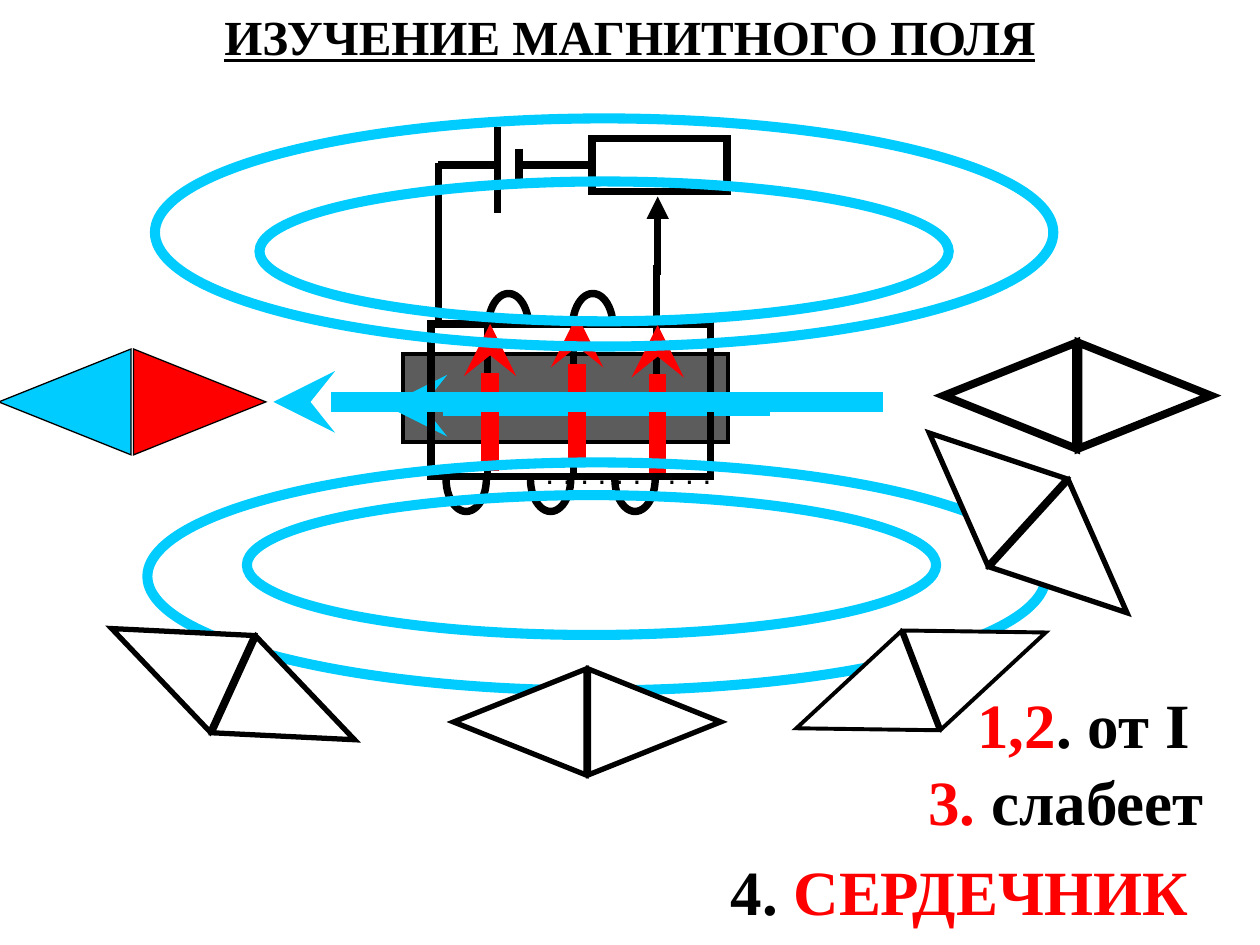
from math import cos, pi, radians, sin

from lxml.etree import SubElement
from pptx import Presentation
from pptx.dml.color import RGBColor
from pptx.enum.shapes import MSO_CONNECTOR as Link, MSO_SHAPE as Preset
from pptx.enum.text import MSO_ANCHOR as Anchor, PP_ALIGN as Align
from pptx.oxml.ns import qn
from pptx.util import Inches, Pt

BLACK, WHITE, RED, CYAN = "000000", "FFFFFF", "FF0000", "00CCFF"
SERIF = "Times New Roman"
WIRE = 4.25          # line width of the circuit, points
FIELD = 5.75         # line width of the field loops
COIL_PITCH = 0.67    # distance between neighbouring turns
COIL_TOP, COIL_BOTTOM = 2.59, 3.8


def color(hex_code):
    return RGBColor.from_string(hex_code)


def style(shape, fill, line, width):
    shape.shadow.inherit = False
    if fill:
        shape.fill.solid()
        shape.fill.fore_color.rgb = color(fill)
    else:
        shape.fill.background()
    shape.line.color.rgb = color(line)
    shape.line.width = Pt(width)
    SubElement(shape.line._get_or_add_ln(), qn("a:miter"), lim="800000")
    return shape


def add_preset(slide, kind, left, top, width, height, fill=None, line=BLACK, weight=WIRE):
    box = [Inches(v) for v in (left, top, width, height)]
    return style(slide.shapes.add_shape(kind, *box), fill, line, weight)


def add_line(slide, start, end, hex_code=BLACK, weight=WIRE, head=None):
    ends = [Inches(v) for v in (*start, *end)]
    line = slide.shapes.add_connector(Link.STRAIGHT, *ends)
    line.line.color.rgb = color(hex_code)
    line.line.width = Pt(weight)
    if head:
        SubElement(line.line._get_or_add_ln(), qn("a:tailEnd"), type=head)
    SubElement(line._element.spPr, qn("a:effectLst"))
    return line


def add_half_turn(slide, center_x, base_y, direction):
    """Half ellipse below (direction 1) or above (-1) the coil's edge."""
    points = [(Inches(center_x - 0.16 * cos(pi * i / 24)),
               Inches(base_y + direction * 0.26 * sin(pi * i / 24))) for i in range(25)]
    builder = slide.shapes.build_freeform(*points[0])
    builder.add_line_segments(points[1:], close=False)
    style(builder.convert_to_shape(), None, BLACK, WIRE)


def add_needle(slide, center_x, center_y, angle, weight, fills=(WHITE, WHITE), base=0.84):
    """Compass needle: two triangles that share a base and point apart."""
    length, offset = 1.05, 0.535
    for turn, fill in zip((angle, angle + 180), fills):
        x = center_x + offset * sin(radians(turn))
        y = center_y - offset * cos(radians(turn))
        half = add_preset(slide, Preset.ISOSCELES_TRIANGLE, x - base / 2, y - length / 2,
                          base, length, fill, BLACK, weight)
        half.rotation = turn % 360


def format_runs(paragraph, pieces, size, font=SERIF, bold=True):
    for words, hex_code in pieces:
        run = paragraph.add_run()
        run.text = words
        run.font.size = Pt(size)
        run.font.name = font
        run.font.bold = bold
        run.font.color.rgb = color(hex_code)


def add_label(slide, left, top, width, height, pieces, size=36, wrap=True, **font):
    label = slide.shapes.add_textbox(*[Inches(v) for v in (left, top, width, height)])
    label.text_frame.word_wrap = wrap
    format_runs(label.text_frame.paragraphs[0], pieces, size, **font)


def add_title(slide, words):
    title = slide.shapes.title
    title.left, title.top, title.width, title.height = 0, 0, Inches(10), Inches(0.57)
    title.text_frame.vertical_anchor = Anchor.TOP
    heading = title.text_frame.paragraphs[0]
    heading.alignment = Align.CENTER
    format_runs(heading, [(words, BLACK)], 28)
    heading.runs[0].font.underline = True


def add_core(slide):
    core = add_preset(slide, Preset.RECTANGLE, 3.2, 2.81, 2.58, 0.7, BLACK, BLACK, 2)
    shade = core._element.spPr.find(qn("a:solidFill"))[0]
    SubElement(shade, qn("a:alpha"), val="64000")
    add_line(slide, (6.11, 3.22), (3.06, 3.22), CYAN, 11.75, "stealth")


def add_circuit(slide):
    # Coil and its winding
    add_preset(slide, Preset.RECTANGLE, 3.42, 2.57, 2.22, 1.21)
    for turn in range(5):
        below = turn % 2 == 0
        add_half_turn(slide, 3.7 + turn * COIL_PITCH / 2,
                      COIL_BOTTOM if below else COIL_TOP, 1 if below else -1)
    for x, top in ((3.87, 2.59), (4.55, 2.59), (5.21, 2.1)):
        add_line(slide, (x, top), (x, 3.77))
    # Battery and its wires
    add_line(slide, (3.48, 2.54), (3.48, 1.29))
    add_line(slide, (3.48, 1.31), (3.93, 1.31))
    add_line(slide, (3.95, 1.01), (3.95, 1.69))
    add_line(slide, (4.12, 1.18), (4.12, 1.46))
    # Rheostat with its slider
    rheostat = add_preset(slide, Preset.RECTANGLE, 4.7, 1.1, 1.07, 0.42)
    add_line(slide, (4.1, 1.31), (4.7, 1.31)).end_connect(rheostat, 1)
    add_line(slide, (5.22, 2.18), (5.22, 1.56), head="triangle")


def add_current_arrows(slide):
    for x, bottom in ((5.22, 3.75), (4.58, 3.67), (3.89, 3.74)):
        add_line(slide, (x, bottom), (x, bottom - 1.17), RED, 10, "stealth")


def add_field(slide):
    inner, outer = (5.47, 1.11), (7.13, 1.81)
    for left, top, size in ((2.06, 1.44, inner), (1.96, 3.93, inner),
                            (1.17, 3.67, outer), (1.23, 0.94, outer)):
        add_preset(slide, Preset.OVAL, left, top, *size, line=CYAN, weight=FIELD)
    add_line(slide, (7.01, 3.19), (2.17, 3.19), CYAN, 11.75, "stealth")


def main():
    deck = Presentation()
    deck.slide_width, deck.slide_height = Inches(10), Inches(7.5)
    slide = deck.slides.add_slide(deck.slide_layouts[5])

    add_title(slide, "ИЗУЧЕНИЕ МАГНИТНОГО ПОЛЯ")
    add_core(slide)
    add_circuit(slide)
    add_current_arrows(slide)

    # Answers
    add_label(slide, 7.66, 5.39, 2.34, 0.71, [("1,2", RED), (". от I", BLACK)])
    add_label(slide, 7.27, 6, 2.66, 0.71, [("3. ", RED), ("слабеет", BLACK)])
    add_label(slide, 5.7, 6.72, 4.14, 0.71, [("4. ", BLACK), ("СЕРДЕЧНИК", RED)])

    # Field loops and the compass needles around them
    add_needle(slide, 8.55, 3.14, 270, 4.5)
    add_field(slide)
    add_needle(slide, 1.05, 3.19, 270, 0.75, (CYAN, RED))
    add_needle(slide, 1.85, 5.43, 114.6, 3)
    add_needle(slide, 4.66, 5.73, 90, 3)
    add_needle(slide, 8.16, 4.15, 312.3, 3, base=0.93)
    add_needle(slide, 7.31, 5.4, 69, 2.25)

    add_label(slide, 4.23, 3.55, 1.53, 0.4, [(". . . . . . . . . .", BLACK)], 18,
              wrap=False, font="Arial", bold=False)
    deck.save("out.pptx")


if __name__ == "__main__":
    main()
